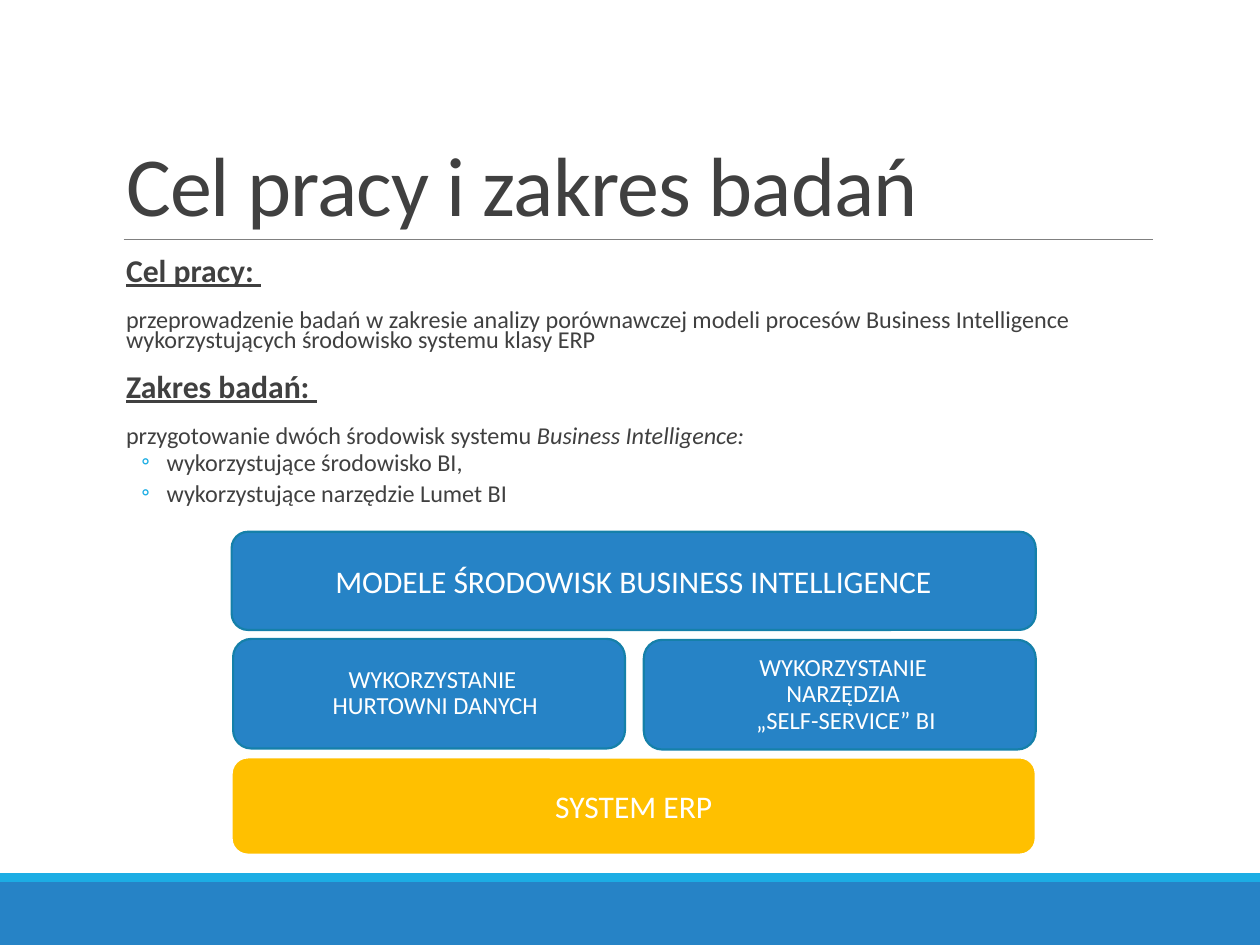
from lxml import etree
from pptx import Presentation
from pptx import util as u
from pptx.dml.color import RGBColor
from pptx.enum import shapes, text
from pptx.oxml.ns import qn

BLUE = RGBColor(0x26, 0x83, 0xC6)
SKY = RGBColor(0x1C, 0xAD, 0xE4)
TEAL = RGBColor(0x15, 0x80, 0xA9)
GOLD = RGBColor(0xFF, 0xC0, 0x00)
GRAY = RGBColor(0x80, 0x80, 0x80)
DARK = RGBColor(0x40, 0x40, 0x40)
WHITE = RGBColor(0xFF, 0xFF, 0xFF)


class Deck:
    """Holds the style and the current slide."""
    font = "Calibri"
    heading, body = 18.1, 13.8

    def __init__(self, s):
        self.s = s

    def run(self, p, words, size, color=DARK, **styles):
        r = p.add_run()
        r.text = words
        r.font.name, r.font.size = self.font, u.Pt(size)
        r.font.color.rgb = color
        for name, value in styles.items():
            setattr(r.font, name, value)
        return r

    def spacing(self, p, lines, before, after, left=0.25, hang=0.0):
        p.line_spacing = lines
        p.space_before, p.space_after = u.Pt(before), u.Pt(after)
        ppr = p._p.get_or_add_pPr()
        ppr.set("marL", str(u.Cm(left)))
        ppr.set("indent", str(u.Cm(-hang)))
        return ppr

    def frame(self, sp, box, anchor):
        sp.left, sp.top, sp.width, sp.height = map(u.Cm, box)
        tf = sp.text_frame
        tf.word_wrap = True
        tf.auto_size = text.MSO_AUTO_SIZE.NONE
        tf.vertical_anchor = anchor
        return tf

    def title(self, words, box):
        tf = self.frame(self.s.shapes.title, box, text.MSO_ANCHOR.BOTTOM)
        p = tf.paragraphs[0]
        p.alignment = text.PP_ALIGN.LEFT
        p.line_spacing = 0.85
        r = self.run(p, words, 48)
        r._r.get_or_add_rPr().set("spc", "-50")

    def content(self, items, box):
        """items: (kind, runs), where runs are (words, styles) pairs."""
        tf = self.frame(self.s.placeholders[1], box, text.MSO_ANCHOR.TOP)
        tf.margin_left = tf.margin_right = 0
        for i, (kind, runs) in enumerate(items):
            p = tf.add_paragraph() if i else tf.paragraphs[0]
            if kind == "bullet":
                p.level = 1
                ppr = self.spacing(p, 0.7, 2, 4, 1.07, 0.51)
                clr = etree.SubElement(ppr, qn("a:buClr"))
                etree.SubElement(clr, qn("a:srgbClr"), val=str(SKY))
                etree.SubElement(ppr, qn("a:buFont"), typeface=self.font)
                etree.SubElement(ppr, qn("a:buChar"), char="◦")
            else:
                ppr = self.spacing(p, 0.7, 12, 2)
                etree.SubElement(ppr, qn("a:buNone"))
            size = self.heading if kind == "heading" else self.body
            for words, styles in runs:
                self.run(p, words, size, **styles)

    def shape(self, kind, box, fill, line=None):
        sp = self.s.shapes.add_shape(kind, *map(u.Cm, box))
        sp.shadow.inherit = False
        sp.fill.solid()
        sp.fill.fore_color.rgb = fill
        if line is None:
            sp.line.fill.background()
        else:
            sp.line.color.rgb = line
            sp.line.width = u.Pt(1.25)
        return sp

    def bar(self, box, fill):
        self.shape(shapes.MSO_SHAPE.RECTANGLE, box, fill)

    def block(self, lines, box, size=18, fill=BLUE, line=TEAL, spaced=False):
        sp = self.shape(shapes.MSO_SHAPE.ROUNDED_RECTANGLE, box, fill, line)
        p = sp.text_frame.paragraphs[0]
        p.alignment = text.PP_ALIGN.CENTER
        if spaced:
            self.spacing(p, 0.9, 12, 2)
        for i, words in enumerate(lines):
            if i:
                p.add_line_break()
            self.run(p, words, size, WHITE)

    def rule(self, x1, x2, y):
        c = self.s.shapes.add_connector(
            shapes.MSO_CONNECTOR.STRAIGHT, u.Cm(x1), u.Cm(y), u.Cm(x2), u.Cm(y))
        c.line.color.rgb, c.line.width = GRAY, u.Pt(0.5)
        etree.SubElement(c._element.spPr, qn("a:effectLst"))


def main():
    prs = Presentation()
    prs.slide_width, prs.slide_height = u.Cm(25.4), u.Cm(19.05)
    d = Deck(prs.slides.add_slide(prs.slide_layouts[1]))

    # Footer bands and title rule
    d.bar((0, 17.78, 25.4, 1.27), BLUE)
    d.bar((0, 17.6, 25.4, 0.18), SKY)
    d.rule(2.49, 23.24, 4.83)

    # Title and body
    d.title("Cel pracy i zakres badań", (2.29, 0.79, 20.96, 4.04))
    strong = {"bold": True, "underline": True}
    d.content([
        ("heading", [("Cel pracy: ", strong)]),
        ("plain", [("przeprowadzenie badań w zakresie analizy porównawczej "
                    "modeli procesów Business Intelligence "
                    "wykorzystujących środowisko systemu klasy ERP", {})]),
        ("heading", [("Zakres badań: ", strong)]),
        ("plain", [("przygotowanie dwóch środowisk systemu ", {}),
                   ("Business Intelligence:", {"italic": True})]),
        ("bullet", [("wykorzystujące środowisko BI,", {})]),
        ("bullet", [("wykorzystujące narzędzie Lumet BI", {})]),
    ], (2.29, 5.13, 20.96, 5.41))

    # Layered model: heading, two variants, common base
    d.block(["MODELE ŚRODOWISK BUSINESS INTELLIGENCE"],
            (4.67, 10.72, 16.21, 1.98))
    d.block(["SYSTEM ERP"], (4.67, 15.27, 16.21, 1.96), fill=GOLD, line=WHITE)
    d.block(["WYKORZYSTANIE ", "NARZĘDZIA ", "„SELF-SERVICE” BI"],
            (12.98, 12.9, 7.9, 2.21), 14, spaced=True)
    d.block(["WYKORZYSTANIE ", "HURTOWNI DANYCH"],
            (4.7, 12.88, 7.9, 2.21), 14, spaced=True)

    prs.save("out.pptx")


if __name__ == "__main__":
    main()
